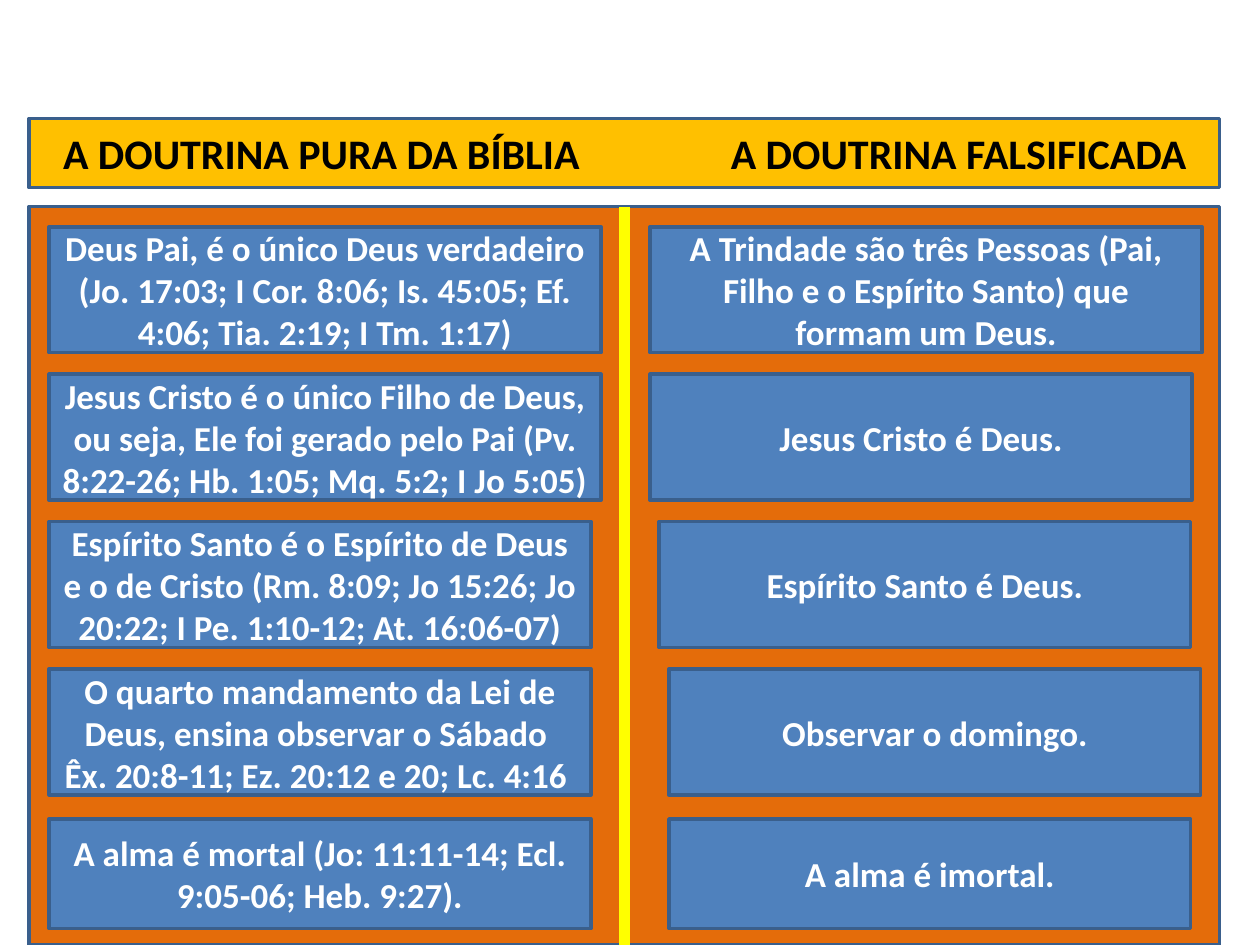
import pptx
import pptx.util
import pptx.dml.color
import pptx.enum.shapes
import pptx.enum.text
import pptx.oxml.ns
from lxml import etree

Inches = pptx.util.Inches
Pt = pptx.util.Pt

HEADINGS = ("A DOUTRINA PURA DA BÍBLIA", "A DOUTRINA FALSIFICADA")

PURE = [
    (4.38, ["Deus Pai, é o único Deus verdadeiro (Jo. 17:03; I Cor. 8:06; Is. 45:05; Ef. 4:06; Tia. 2:19; I Tm. 1:17)"]),
    (4.38, ["Jesus Cristo é o único Filho de Deus, ou seja, Ele foi gerado pelo Pai (Pv. 8:22-26; Hb. 1:05; Mq. 5:2; I Jo 5:05)"]),
    (4.3, ["Espírito Santo é o Espírito de Deus e o de Cristo (Rm. 8:09; Jo 15:26; Jo 20:22; I Pe. 1:10-12; At. 16:06-07)"]),
    (4.3, ["O quarto mandamento da Lei de Deus, ensina observar o Sábado ",
           "Êx. 20:8-11; Ez. 20:12 e 20; Lc. 4:16 "]),
    (4.3, ["A alma é mortal (Jo: 11:11-14; Ecl. 9:05-06; Heb. 9:27)."]),
]

FALSIFIED = [
    (5.16, 4.38, ["A Trindade são três Pessoas (Pai, Filho e o Espírito Santo) que formam um Deus."]),
    (5.16, 4.3, ["Jesus Cristo é Deus."]),
    (5.23, 4.22, ["Espírito Santo é Deus."]),
    (5.31, 4.22, ["Observar o domingo."]),
    (5.31, 4.14, ["A alma é imortal."]),
]

THEME = {
    "font": "Calibri",
    "heading_size": 24,
    "body_size": 20,
    "heading_fill": "FFC000",
    "panel_fill": "E46C0A",
    "card_fill": "4F81BD",
    "outline": "3A5F8C",
    "divider": "FFFF00",
    "heading_text": "000000",
    "card_text": "FFFFFF",
}

MARGIN, FULL_WIDTH = 0.23, 9.45
PURE_LEFT = 0.39
FIRST_TOP, ROW_PITCH, ROW_HEIGHT = 1.8, 1.17, 1
LAST_TOP, LAST_HEIGHT = 6.5, 0.87
HEADING_INSET, HEADING_TAB = 0.27, 5.3


def color(name):
    return pptx.dml.color.RGBColor.from_string(THEME[name])


def add_box(page, left, top, width, height, fill):
    box = page.shapes.add_shape(
        pptx.enum.shapes.MSO_SHAPE.RECTANGLE,
        Inches(left), Inches(top), Inches(width), Inches(height))
    box.shadow.inherit = False
    box.fill.solid()
    box.fill.fore_color.rgb = color(fill)
    box.line.color.rgb = color("outline")
    box.line.width = Pt(2)
    box.text_frame.word_wrap = True
    box.text_frame.vertical_anchor = pptx.enum.text.MSO_ANCHOR.MIDDLE
    return box


def style(para, size, text_color, alignment):
    para.alignment = alignment
    para.font.name = THEME["font"]
    para.font.size = Pt(THEME[size])
    para.font.bold = True
    para.font.color.rgb = color(text_color)


def add_heading(page):
    frame = add_box(page, MARGIN, 0.94, FULL_WIDTH, 0.55, "heading_fill").text_frame
    frame.margin_left = Inches(HEADING_INSET)
    para = frame.paragraphs[0]
    para.text = "\t".join(HEADINGS)
    qn = pptx.oxml.ns.qn
    tabs = etree.SubElement(para._p.get_or_add_pPr(), qn("a:tabLst"))
    etree.SubElement(tabs, qn("a:tab"), pos=str(Inches(HEADING_TAB)), algn="l")
    style(para, "heading_size", "heading_text", pptx.enum.text.PP_ALIGN.LEFT)


def add_panel(page):
    panel = add_box(page, MARGIN, 1.64, FULL_WIDTH, 5.86, "panel_fill")
    divider = page.shapes.add_connector(
        pptx.enum.shapes.MSO_CONNECTOR.STRAIGHT, 0, 0, 0, 0)
    divider.begin_connect(panel, 0)
    divider.end_connect(panel, 2)
    divider.line.color.rgb = color("divider")
    divider.line.width = Pt(6)
    etree.SubElement(divider._element.spPr, pptx.oxml.ns.qn("a:effectLst"))


def add_card(page, left, top, width, height, lines):
    frame = add_box(page, left, top, width, height, "card_fill").text_frame
    frame.text = "\n".join(lines)
    for para in frame.paragraphs:
        style(para, "body_size", "card_text", pptx.enum.text.PP_ALIGN.CENTER)


def main():
    deck = pptx.Presentation()
    deck.slide_width, deck.slide_height = Inches(10), Inches(7.5)
    page = deck.slides.add_slide(deck.slide_layouts[6])
    add_heading(page)
    add_panel(page)
    for row, (pure, falsified) in enumerate(zip(PURE, FALSIFIED)):
        last = row == len(PURE) - 1
        top = LAST_TOP if last else FIRST_TOP + row * ROW_PITCH
        height = LAST_HEIGHT if last else ROW_HEIGHT
        for left, width, lines in ((PURE_LEFT, *pure), falsified):
            add_card(page, left, top, width, height, lines)
    deck.save("out.pptx")


if __name__ == "__main__":
    main()
